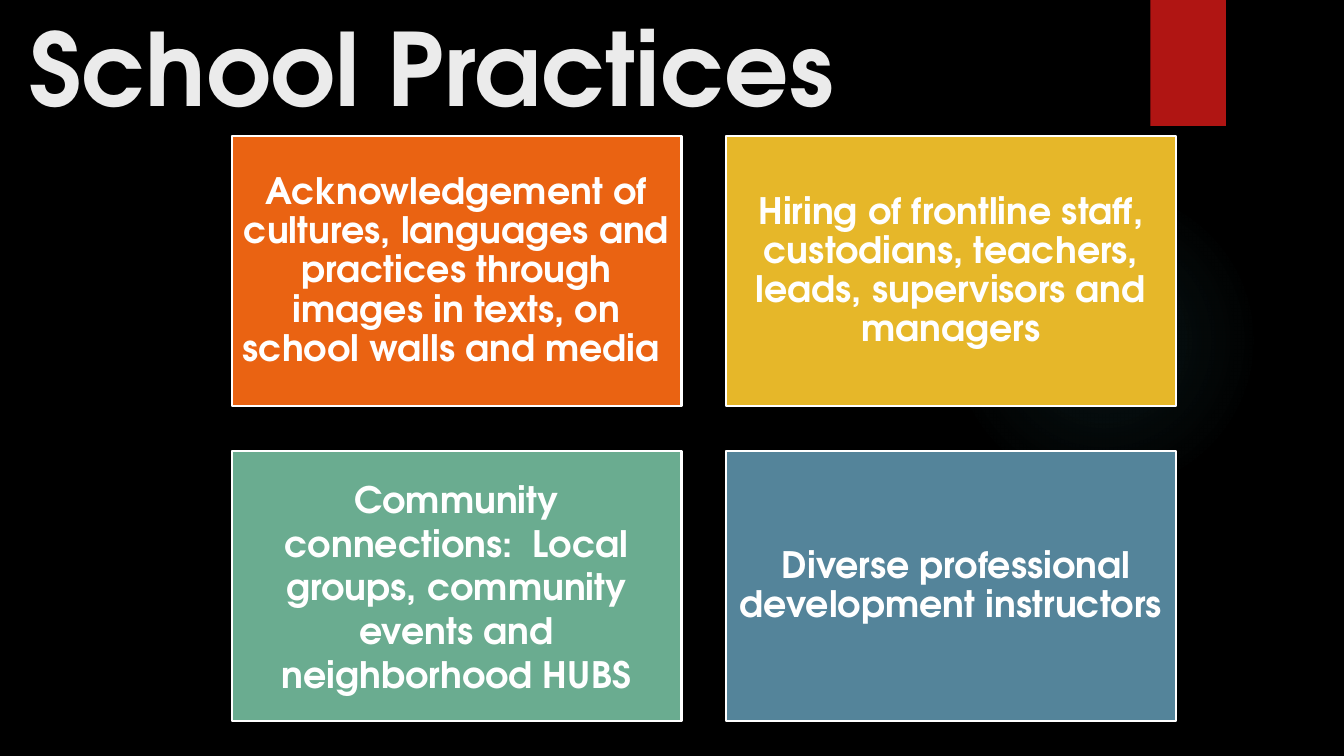
from lxml import etree
from pptx import Presentation
from pptx.dml.color import RGBColor
from pptx.enum.shapes import MSO_SHAPE
from pptx.enum.text import MSO_ANCHOR, PP_ALIGN
from pptx.oxml import parse_xml
from pptx.oxml.ns import nsdecls, qn
from pptx.util import Pt

RECTANGLE, OVAL = MSO_SHAPE.RECTANGLE, MSO_SHAPE.OVAL
TOP, MIDDLE = MSO_ANCHOR.TOP, MSO_ANCHOR.MIDDLE
LEFT, CENTER = PP_ALIGN.LEFT, PP_ALIGN.CENTER

BLACK = RGBColor(0x00, 0x00, 0x00)
WHITE = RGBColor(0xFF, 0xFF, 0xFF)
PALE = RGBColor(0xEB, 0xEB, 0xEB)
RED = RGBColor(0xB0, 0x15, 0x13)
ORANGE = RGBColor(0xEA, 0x63, 0x12)
YELLOW = RGBColor(0xE6, 0xB7, 0x29)
GREEN = RGBColor(0x6A, 0xAC, 0x90)
BLUE = RGBColor(0x54, 0x84, 0x9A)
TEAL = RGBColor(0x50, 0xB9, 0xC1)

CARD_WIDTH, CARD_HEIGHT = 321.4, 192.8
CARD_LEFT, CARD_TOP = 165.5, 97.3
COLUMN_STEP, ROW_STEP = 353.2, 225

# Each card: fill, line spacing, runs as (text, bold)
CARDS = [
    (ORANGE, 0.9, [("Acknowledgement of cultures, languages and practices through "
                    "images in texts, on school walls and media ", True)]),
    (YELLOW, 0.9, [("Hiring of frontline staff, custodians, teachers, leads, "
                    "supervisors and managers", True)]),
    (GREEN, 1.0, [("Community connections:  Local groups, community events and "
                   "neighborhood HUBS", True)]),
    (BLUE, 0.9, [(" ", False), ("Diverse professional development instructors", True)]),
]


class SlideBuilder:
    font = "TeX Gyre Adventor"

    def __init__(self, page):
        self.page = page
        page.background.fill.solid()
        page.background.fill.fore_color.rgb = BLACK

    def shape(self, kind, left, top, width, height, fill, line=None):
        shape = self.page.shapes.add_shape(kind, Pt(left), Pt(top), Pt(width), Pt(height))
        shape.shadow.inherit = False
        shape.fill.solid()
        shape.fill.fore_color.rgb = fill
        if line is None:
            shape.line.fill.background()
        else:
            shape.line.color.rgb = line
            shape.line.width = Pt(1.5)
        return shape

    def glow(self, left, top, size, color, stops):
        """Draw a circle that fades outwards; stops are (position, opacity) in percent."""
        circle = self.shape(OVAL, left, top, size, size, color)
        gradient = parse_xml(
            f'<a:gradFill {nsdecls("a")}><a:gsLst/><a:path path="circle">'
            '<a:fillToRect l="50000" t="50000" r="50000" b="50000"/></a:path></a:gradFill>')
        for position, opacity in stops:
            gradient[0].append(etree.fromstring(
                f'<a:gs {nsdecls("a")} pos="{position * 1000}"><a:srgbClr val="{color}">'
                f'<a:alpha val="{opacity * 1000}"/></a:srgbClr></a:gs>'))
        properties = circle.element.spPr
        properties.replace(properties.find(qn("a:solidFill")), gradient)

    def add_text(self, box, runs, size, color, align, anchor, margins, spacing=1.0):
        frame = box.text_frame
        frame.word_wrap = True
        frame.vertical_anchor = anchor
        frame.margin_left = frame.margin_right = Pt(margins[0])
        frame.margin_top = frame.margin_bottom = Pt(margins[1])
        para = frame.paragraphs[0]
        para.alignment = align
        para.line_spacing = spacing
        for text, bold in runs:
            span = para.add_run()
            span.text = text
            span.font.name = self.font
            span.font.size = Pt(size)
            span.font.bold = bold
            span.font.color.rgb = color

    def title(self, text, left, top, width, height):
        box = self.page.shapes.add_textbox(Pt(left), Pt(top), Pt(width), Pt(height))
        self.add_text(box, [(text, True)], 72, PALE, LEFT, TOP, (7.2, 3.6))

    def card(self, left, top, fill, spacing, runs):
        box = self.shape(RECTANGLE, left, top, CARD_WIDTH, CARD_HEIGHT, fill, WHITE)
        self.add_text(box, runs, 26, WHITE, CENTER, MIDDLE, (7.8, 7.8), spacing)


def main():
    deck = Presentation()
    deck.slide_width, deck.slide_height = Pt(960), Pt(540)
    builder = SlideBuilder(deck.slides.add_slide(deck.slide_layouts[6]))

    builder.glow(677.5, 131.8, 221.8, TEAL, [(0, 7), (36, 6), (69, 0), (100, 0)])
    builder.shape(RECTANGLE, 821.7, 0, 54, 90, RED)
    builder.title("School Practices", 13.7, 0.7, 777.6, 80.6)
    for index, (fill, spacing, runs) in enumerate(CARDS):
        row, column = divmod(index, 2)
        builder.card(CARD_LEFT + column * COLUMN_STEP, CARD_TOP + row * ROW_STEP,
                     fill, spacing, runs)

    deck.save("out.pptx")


if __name__ == "__main__":
    main()
